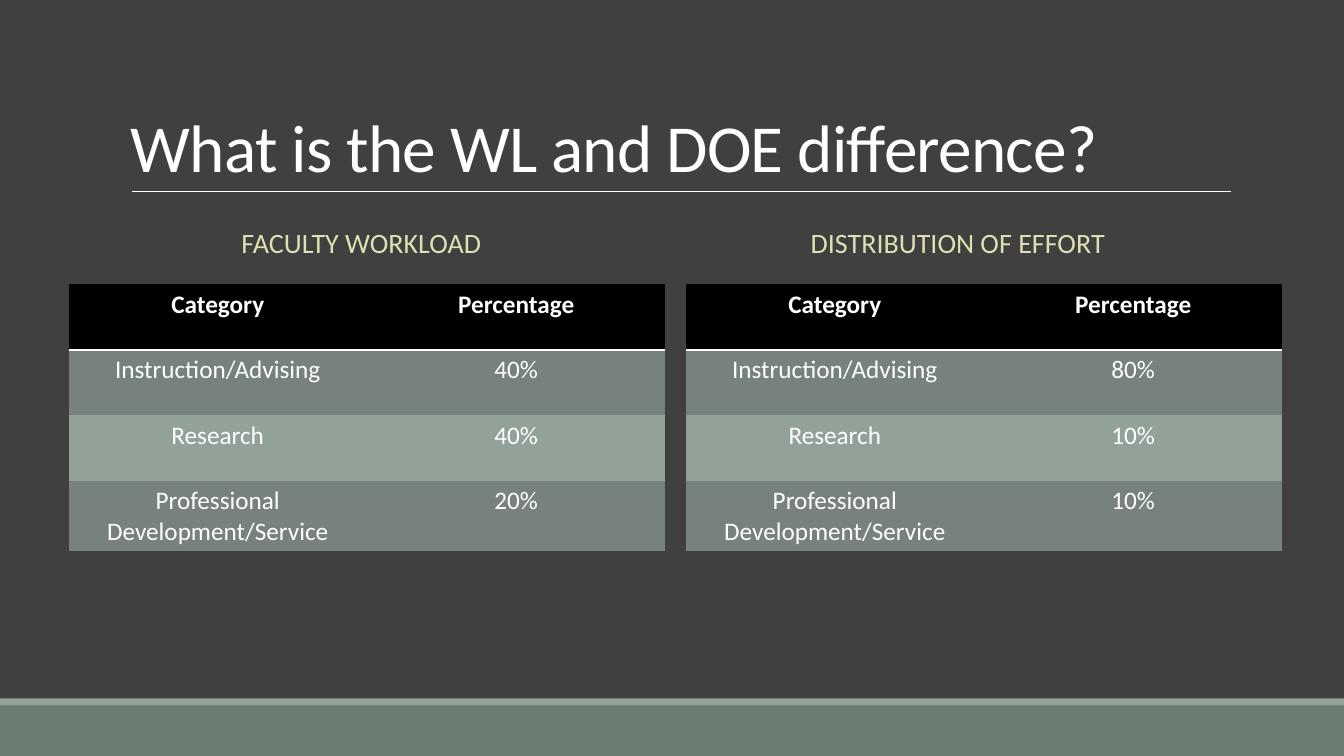
from lxml.etree import SubElement
from pptx import Presentation
from pptx.dml.color import RGBColor
from pptx.enum.shapes import MSO_CONNECTOR, MSO_SHAPE
from pptx.enum.text import MSO_ANCHOR, PP_ALIGN
from pptx.oxml import parse_xml
from pptx.oxml.ns import nsdecls, qn
from pptx.util import Inches, Pt

TITLE = "What is the WL and DOE difference?"
HEADER = ("Category", "Percentage")
CATEGORIES = ("Instruction/Advising", "Research", "Professional Development/Service")
PANELS = [
    {"heading": "FACULTY WORKLOAD", "shares": ("40%", "40%", "20%"),
     "heading_left": 1.2, "table_left": 0.68, "right_inset": 0.73},
    {"heading": "DISTRIBUTION OF EFFORT", "shares": ("80%", "10%", "10%"),
     "heading_left": 6.8, "table_left": 6.8, "right_inset": 0.1},
]
COLORS = {"back": "404040", "footer": "6B7D72", "sage": "93A299", "white": "FFFFFF",
          "heading": "DFE0B1", "header": "000000", "band": "76827B"}
BARS = [(7, 0.5, "footer"), (6.93, 0.07, "sage")]
WIDTH, HEIGHT = 13.33, 7.5
COL_W, ROW_H = 2.96, 0.65
NO_STYLE = "{2D5ABB26-0587-4C30-8999-92F81FD0307C}"
TITLE_FORMAT = {"line_spacing": 0.85}
HEADING_FORMAT = {"alignment": PP_ALIGN.CENTER, "line_spacing": 0.9,
                  "space_before": Pt(12), "space_after": Pt(2)}
CELL_FORMAT = {"alignment": PP_ALIGN.CENTER}


def rgb(name):
    return RGBColor.from_string(COLORS[name])


def paint(fill, name):
    fill.solid()
    fill.fore_color.rgb = rgb(name)


def write(tf, text, size, color, para_format, bold=False):
    p = tf.paragraphs[0]
    for key, value in para_format.items():
        setattr(p, key, value)
    r = p.add_run()
    r.text = text
    for key, value in {"name": "Calibri", "size": Pt(size), "bold": bold}.items():
        setattr(r.font, key, value)
    r.font.color.rgb = rgb(color)
    return r


def add_text(s, box, anchor, right_inset=0.1):
    tf = s.shapes.add_textbox(*map(Inches, box)).text_frame
    for key, value in {"word_wrap": True, "vertical_anchor": anchor,
                       "margin_right": Inches(right_inset)}.items():
        setattr(tf, key, value)
    return tf


def underline(cell):
    cell._tc.get_or_add_tcPr().insert(0, parse_xml(
        f'<a:lnB {nsdecls("a")} w="{Pt(2)}"><a:solidFill>'
        f'<a:srgbClr val="{COLORS["white"]}"/></a:solidFill></a:lnB>'))


def add_table(s, left, shares):
    rows = [HEADER, *zip(CATEGORIES, shares)]
    frame = s.shapes.add_table(len(rows), len(HEADER), Inches(left), Inches(2.82),
                               Inches(COL_W * len(HEADER)), Inches(ROW_H * len(rows)))
    table = frame.table
    table._tbl.tblPr.find(qn("a:tableStyleId")).text = NO_STYLE
    for col in table.columns:
        col.width = Inches(COL_W)
    for i, row in enumerate(rows):
        table.rows[i].height = Inches(ROW_H)
        fill = "header" if i == 0 else ("sage", "band")[i % 2]
        for j, text in enumerate(row):
            cell = table.cell(i, j)
            paint(cell.fill, fill)
            write(cell.text_frame, text, 18, "white", CELL_FORMAT, i == 0)
            if i == 0:
                underline(cell)


def main():
    """Build the workload and effort comparison slide."""
    prs = Presentation()
    prs.slide_width, prs.slide_height = Inches(WIDTH), Inches(HEIGHT)
    s = prs.slides.add_slide(prs.slide_layouts[6])
    paint(s.background.fill, "back")

    for top, height, color in BARS:
        sp = s.shapes.add_shape(MSO_SHAPE.RECTANGLE, 0, Inches(top),
                                Inches(WIDTH), Inches(height))
        sp.shadow.inherit = False
        paint(sp.fill, color)
        sp.line.fill.background()

    rule = s.shapes.add_connector(MSO_CONNECTOR.STRAIGHT,
                                  *map(Inches, (1.31, 1.9, 12.21, 1.9)))
    rule.line.color.rgb = rgb("white")
    rule.line.width = Pt(0.5)
    SubElement(rule._element.spPr, qn("a:effectLst"))

    tf = add_text(s, (1.2, 0.31, 11, 1.59), MSO_ANCHOR.BOTTOM)
    r = write(tf, TITLE, 48, "white", TITLE_FORMAT)
    r._r.get_or_add_rPr().set("spc", "-50")

    for panel in PANELS:
        tf = add_text(s, (panel["heading_left"], 2.02, 5.4, 0.81),
                      MSO_ANCHOR.MIDDLE, panel["right_inset"])
        write(tf, panel["heading"], 20, "heading", HEADING_FORMAT)
        add_table(s, panel["table_left"], panel["shares"])

    prs.save("out.pptx")


if __name__ == "__main__":
    main()
